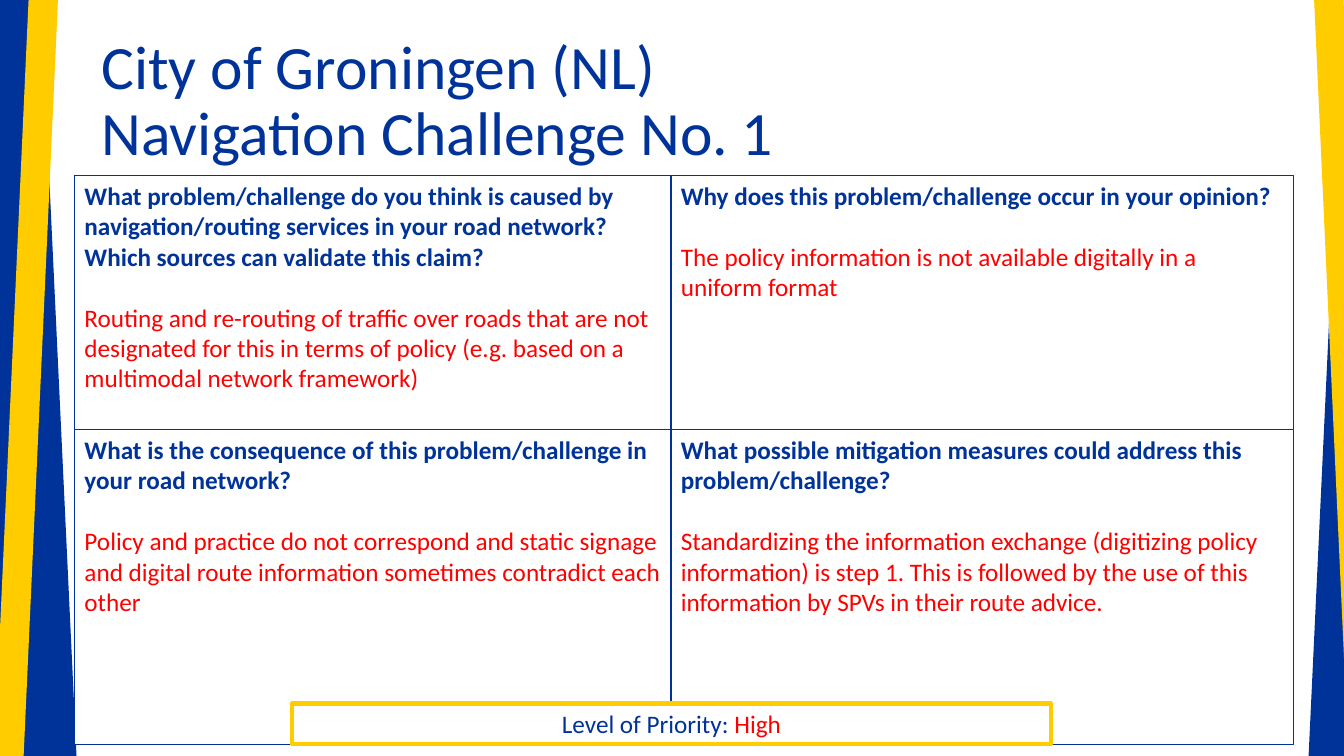
from pptx import Presentation
from pptx.dml.color import RGBColor
from pptx.enum.shapes import MSO_SHAPE
from pptx.enum.text import MSO_ANCHOR, MSO_AUTO_SIZE, PP_ALIGN
from pptx.util import Pt

PX = 9525  # EMU in one px (96 px to the inch)
BLUE = RGBColor(0x00, 0x33, 0x99)
YELLOW = RGBColor(0xFF, 0xCC, 0x00)
RED = RGBColor(0xFF, 0x00, 0x00)
WHITE = RGBColor(0xFF, 0xFF, 0xFF)

QUESTION = {"size": Pt(18), "name": "Calibri", "bold": True, "color": BLUE}
ANSWER = {**QUESTION, "bold": False, "color": RED}
LABEL = {**ANSWER, "color": BLUE}
TITLE = {**LABEL, "size": Pt(44)}

# Left, top, width, height, rotation, colour
BANDS = [
    (-15, -17, 71, 759, -2.7, BLUE),
    (11, -15, 28, 745, 2.6, YELLOW),
    (1263, -13, 71, 759, 2.7, BLUE),
    (1268, -12, 28, 745, -2.6, YELLOW),
]

COLUMNS = [(71, 569), (639, 593)]  # left, width
ROW_TOPS = [167, 409]
BOX_HEIGHT = 300
TALL_BOX_HEIGHT = 359  # the first box runs on behind the one below it
CHALLENGE = [
    [
        ("What problem/challenge do you think is caused by navigation/routing services "
         "in your road network? Which sources can validate this claim?",
         "Routing and re-routing of traffic over roads that are not designated for this "
         "in terms of policy (e.g. based on a multimodal network framework)"),
        ("Why does this problem/challenge occur in your opinion?",
         "The policy information is not available digitally in a uniform format"),
    ],
    [
        ("What is the consequence of this problem/challenge in your road network?",
         "Policy and practice do not correspond and static signage and digital route "
         "information sometimes contradict each other"),
        ("What possible mitigation measures could address this problem/challenge?",
         "Standardizing the information exchange (digitizing policy information) is step 1. "
         "This is followed by the use of this information by SPVs in their route advice."),
    ],
]


def format_font(font, style):
    for name, value in style.items():
        if name == "color":
            font.color.rgb = value
        else:
            setattr(font, name, value)


def add_span(para, text, style):
    span = para.add_run()
    span.text = text
    format_font(span.font, style)


def add_rectangle(page, left, top, width, height, fill):
    box = page.shapes.add_shape(MSO_SHAPE.RECTANGLE, left * PX, top * PX, width * PX, height * PX)
    box.shadow.inherit = False
    box.fill.solid()
    box.fill.fore_color.rgb = fill
    box.line.fill.background()
    return box


def add_band(page, left, top, width, height, rotation, colour):
    band = add_rectangle(page, left, top, width, height, colour)
    band.rotation = rotation


def add_text_box(page, place, line_colour, line_width, paragraphs, align, gap=0):
    box = add_rectangle(page, *place, WHITE)
    box.line.color.rgb = line_colour
    box.line.width = Pt(line_width)
    frame = box.text_frame
    frame.word_wrap = True
    frame.vertical_anchor = MSO_ANCHOR.TOP
    for index, spans in enumerate(paragraphs):
        para = frame.add_paragraph() if index else frame.paragraphs[0]
        para.alignment = align
        para.space_before = Pt(gap if index else 0)
        for text, style in spans:
            add_span(para, text, style)


def set_title(page, text):
    title = page.shapes.title
    place = {"left": 87, "top": 28, "width": 1104, "height": 139}
    for name, value in place.items():
        setattr(title, name, value * PX)
    frame = title.text_frame
    frame.text = text
    frame.auto_size = MSO_AUTO_SIZE.NONE
    frame.vertical_anchor = MSO_ANCHOR.MIDDLE
    para = frame.paragraphs[0]
    para.alignment = PP_ALIGN.LEFT
    para.line_spacing = 0.9
    for span in para.runs:
        format_font(span.font, TITLE)


def main():
    deck = Presentation()
    deck.slide_width = 1280 * PX
    deck.slide_height = 720 * PX
    page = deck.slides.add_slide(deck.slide_layouts[5])

    # Slanted bands at both edges
    for band in BANDS:
        add_band(page, *band)

    set_title(page, "City of Groningen (NL) \vNavigation Challenge No. 1")

    # Four question boxes
    for row, (top, entries) in enumerate(zip(ROW_TOPS, CHALLENGE)):
        for column, ((left, width), (question, answer)) in enumerate(zip(COLUMNS, entries)):
            height = TALL_BOX_HEIGHT if row == column == 0 else BOX_HEIGHT
            paragraphs = [[(question, QUESTION)], [(answer, ANSWER)]]
            add_text_box(page, (left, top, width, height), BLUE, 1,
                         paragraphs, PP_ALIGN.LEFT, gap=22)

    # Priority label
    add_text_box(page, (278, 670, 723, 39), YELLOW, 3,
                 [[("Level of Priority: ", LABEL), ("High", ANSWER)]], PP_ALIGN.CENTER)

    deck.save("out.pptx")


if __name__ == "__main__":
    main()
